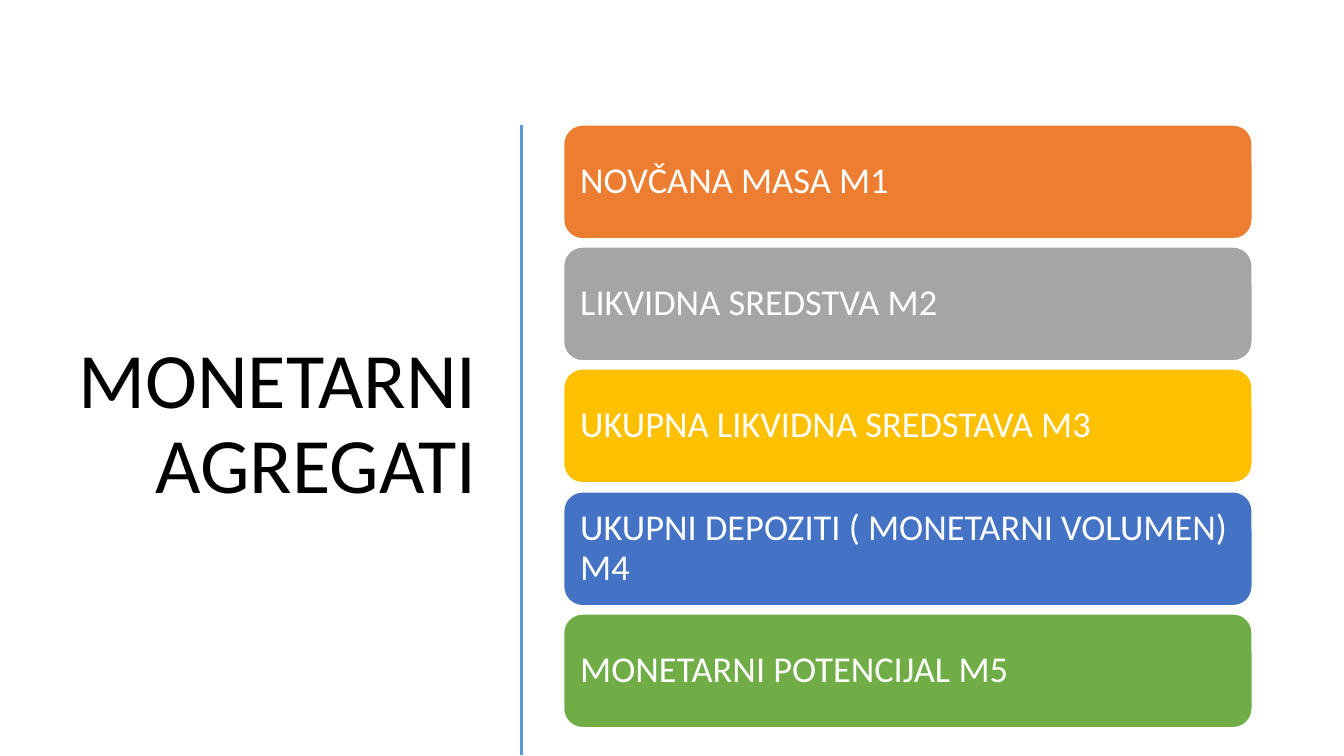
import pptx
import pptx.util
from lxml import etree
from pptx.dml.color import RGBColor
from pptx.enum.shapes import MSO_CONNECTOR, MSO_SHAPE
from pptx.enum.text import MSO_ANCHOR, MSO_AUTO_SIZE, PP_ALIGN
from pptx.oxml.ns import qn

PX = 9144  # 100 px to the inch
AGGREGATES = [
    ("NOVČANA MASA M1", "ED7D31"),
    ("LIKVIDNA SREDSTVA M2", "A5A5A5"),
    ("UKUPNA LIKVIDNA SREDSTAVA M3", "FFC000"),
    ("UKUPNI DEPOZITI ( MONETARNI VOLUMEN) M4", "4472C4"),
    ("MONETARNI POTENCIJAL M5", "70AD47"),
]


def px(*lengths):
    return [pptx.util.Emu(n * PX) for n in lengths]


def paint(color_format, color):
    color_format.rgb = RGBColor.from_string(color)


def write(sp, text, size, color, align, inset=(10, 5)):
    tf = sp.text_frame
    tf.word_wrap = True
    tf.auto_size = MSO_AUTO_SIZE.NONE
    tf.vertical_anchor = MSO_ANCHOR.MIDDLE
    tf.margin_left, tf.margin_top = tf.margin_right, tf.margin_bottom = px(*inset)
    p = tf.paragraphs[0]
    p.alignment = align
    p.line_spacing = 0.9
    r = p.add_run()
    r.text = text
    r.font.name = "Calibri"
    r.font.size = pptx.util.Pt(size)
    paint(r.font.color, color)


def add_title(s, x, y, w, h):
    sp = s.shapes.title
    sp.left, sp.top, sp.width, sp.height = px(x, y, w, h)
    write(sp, "MONETARNI AGREGATI", 56, "000000", PP_ALIGN.RIGHT)


def add_divider(s, x, y, h):
    line = s.shapes.add_connector(MSO_CONNECTOR.STRAIGHT, *px(x, y, x, y + h))
    paint(line.line.color, "5B9BD5")
    line.line.width = pptx.util.Pt(2)
    etree.SubElement(line._element.spPr, qn("a:effectLst"))


def add_aggregates(s, x, y, w, h, gap=8):
    """Stack one rounded bar per aggregate, filling the box from top to bottom."""
    pitch = (h + gap) / len(AGGREGATES)
    for i, (text, color) in enumerate(AGGREGATES):
        box = px(x, round(y + i * pitch), w, round(pitch - gap))
        sp = s.shapes.add_shape(MSO_SHAPE.ROUNDED_RECTANGLE, *box)
        sp.shadow.inherit = False
        sp.fill.solid()
        paint(sp.fill.fore_color, color)
        paint(sp.line.color, "FFFFFF")
        sp.line.width = pptx.util.Pt(1)
        write(sp, text, 26, "FFFFFF", PP_ALIGN.LEFT, inset=(11, 11))


def main():
    prs = pptx.Presentation()
    prs.slide_width, prs.slide_height = px(1333, 750)
    s = prs.slides.add_slide(prs.slide_layouts[5])
    add_title(s, 52, 117, 431, 611)
    add_divider(s, 517, 124, 625)
    add_aggregates(s, 559, 124, 683, 598)
    prs.save("out.pptx")


if __name__ == "__main__":
    main()
